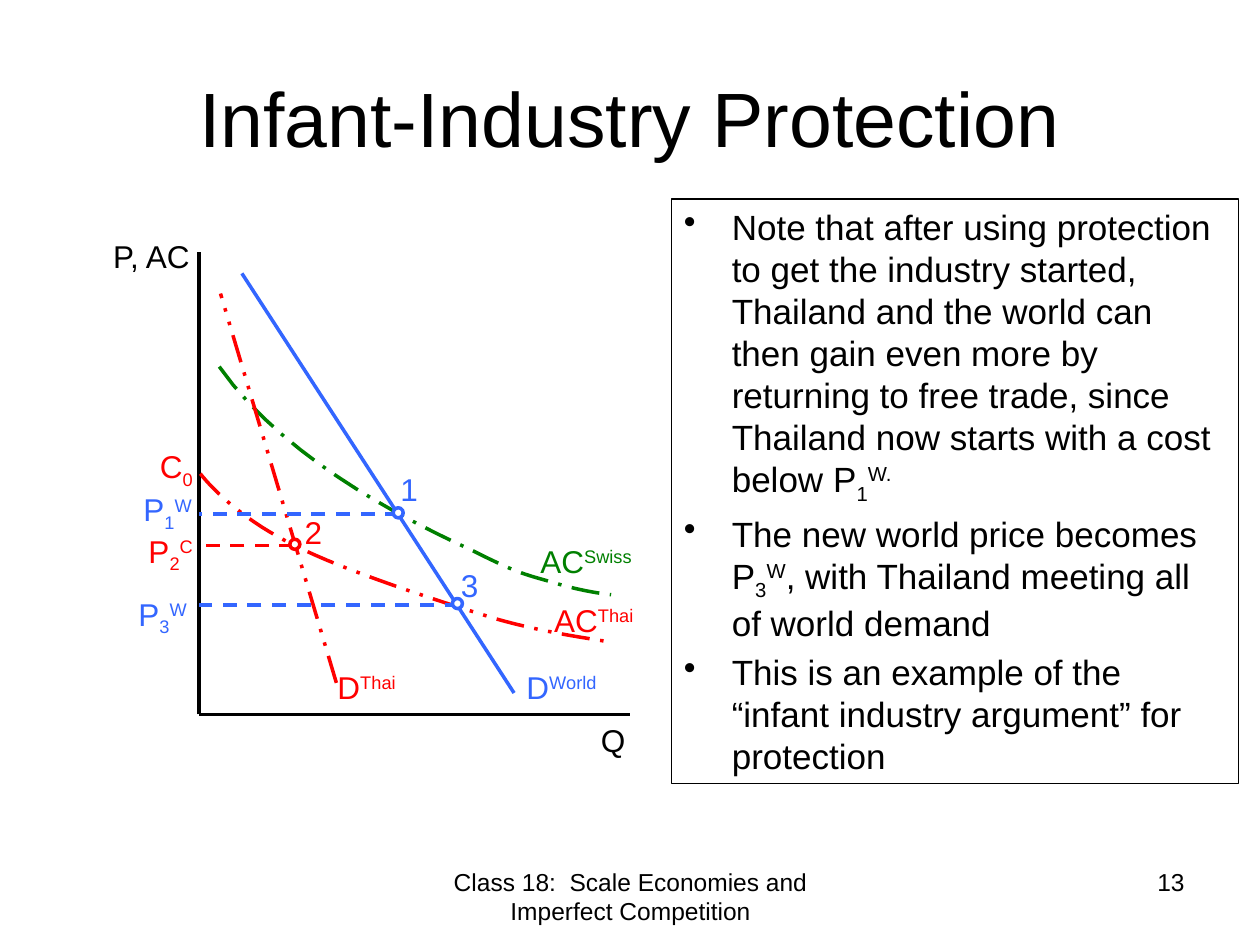
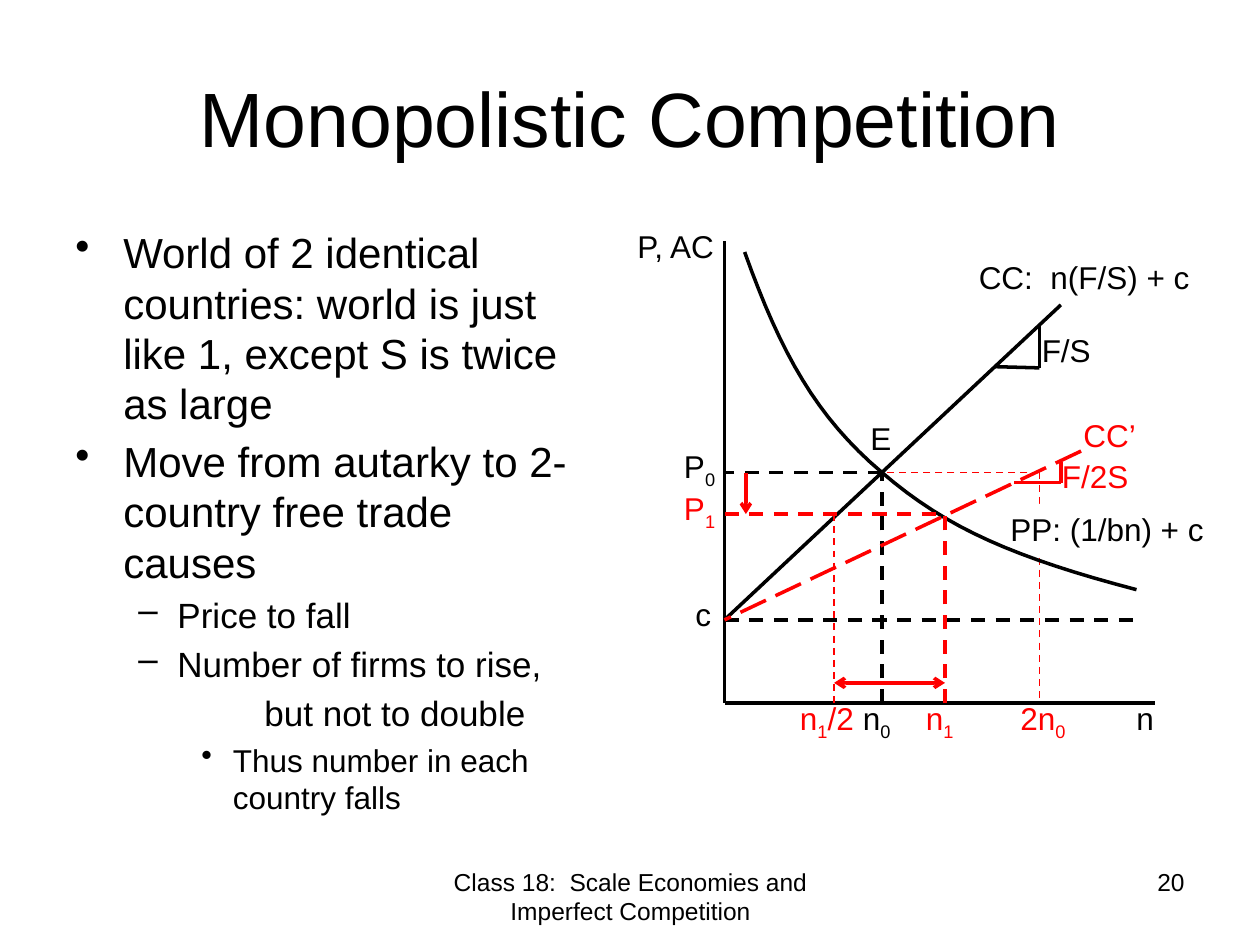
from pptx import Presentation
from pptx.dml.color import RGBColor
from pptx.enum import dml, shapes, text
from pptx.oxml import parse_xml
from pptx.oxml.ns import nsdecls, qn
from pptx.util import Inches, Pt

FONT = "Arial"
COLORS = {"black": "000000", "white": "FFFFFF", "red": "FF0000",
          "blue": "3366FF", "green": "008000"}
DASHES = {"dash": dml.MSO_LINE.DASH, "long": dml.MSO_LINE.LONG_DASH,
          "dash_dot": dml.MSO_LINE.LONG_DASH_DOT,
          "dash_dot_dot": dml.MSO_LINE.DASH_DOT_DOT}
FOOTER = "Class 18:  Scale Economies and Imperfect Competition"
AXIS_WIDTH, AXIS_HEIGHT = 3.42, 3.67
LABEL_HEIGHT, DOT = 0.4, 0.08

# Outline levels: left margin, first-line indent, bullet, text size
LEVELS = {"point20": (0.38, -0.38, "•", 20),
          "point24": (0.38, -0.38, "•", 24),
          "dash": (0.81, -0.31, "–", 20),
          "continued": (1.5, 0, None, 20),
          "detail": (1.25, -0.25, "•", 18)}

# In all text, "|_" starts a subscript, "|^" a superscript, "|" normal text.
# Lines: x1, y1, x2, y2, colour, dash, width, arrow
# Curves: colour, dash, start point, then three points per Bezier segment
# Labels: text, left, top, width, colour
INFANT = {
    "title": "Infant-Industry Protection", "number": "13",
    "body": {"box": (5.33, 1.58, 4.5, 4.64), "outline": "black", "items": [
        ("point20", "Note that after using protection to get the industry started, "
                    "Thailand and the world can then gain even more by returning to "
                    "free trade, since Thailand now starts with a cost below P|_1|^W."),
        ("point20", "The new world price becomes P|_3|^W|, with Thailand meeting "
                    "all of world demand"),
        ("point20", "This is an example of the “infant industry argument” "
                    "for protection")]},
    "origin": (1.58, 5.67),
    "curves": [
        ("green", "dash_dot", [(1.74, 2.91), (2.3, 3.71), (3.41, 4.21), (3.75, 4.37),
                               (4.09, 4.54), (4.13, 4.55), (4.38, 4.62),
                               (4.63, 4.7), (4.85, 4.72), (4.85, 4.72)]),
        ("red", "dash_dot_dot", [(1.59, 3.76), (1.7, 3.9), (1.95, 4.14), (2.34, 4.33),
                                 (2.73, 4.53), (3.51, 4.78), (3.93, 4.91),
                                 (4.35, 5.03), (4.71, 5.07), (4.86, 5.1)])],
    "lines": [
        (2.67, 5.42, 1.75, 2.33, "red", "dash_dot_dot"),
        (2.33, 4.33, 1.58, 4.33, "red", "dash"),
        (4.08, 5.5, 1.92, 2.17, "blue"),
        (3.17, 4.08, 1.58, 4.08, "blue", "dash"),
        (3.64, 4.8, 1.58, 4.8, "blue", "dash")],
    "dots": [(2.34, 4.32, "red"), (3.16, 4.07, "blue"), (3.63, 4.79, "blue")],
    "labels": [
        ("P, AC", 0.8, 1.83, 1.12, "black"),
        ("Q", 4.67, 5.67, 0.58, "black"),
        ("AC|^Swiss", 4.19, 4.25, 1.02, "green"),
        ("AC|^Thai", 4.3, 4.72, 0.87, "red"),
        ("D|^Thai", 2.58, 5.25, 0.78, "red"),
        ("D|^World", 4.08, 5.25, 1.58, "blue"),
        ("C|_0", 1.17, 3.5, 0.58, "red"),
        ("P|_1|^W", 1.04, 3.84, 0.67, "blue"),
        ("P|_2|^C", 1.08, 4.17, 0.58, "red"),
        ("P|_3|^W", 1, 4.67, 0.67, "blue"),
        ("1", 3.08, 3.68, 0.38, "blue"),
        ("2", 2.32, 4.02, 0.38, "red"),
        ("3", 3.56, 4.44, 0.38, "blue")],
}

MONOPOLISTIC = {
    "title": "Monopolistic Competition", "number": "20",
    "body": {"box": (0.5, 1.75, 4.15, 4.95), "outline": None, "items": [
        ("point24", "World of 2 identical countries: world is just like 1, "
                    "except S is twice as large"),
        ("point24", "Move from autarky to 2-country free trade causes"),
        ("dash", "Price to fall"),
        ("dash", "Number of firms to rise,"),
        ("continued", "but not to double"),
        ("detail", "Thus number in each country falls")]},
    "back_lines": [(8.25, 3.75, 8.25, 5.58, "red", "dash", 1)],
    "back_labels": [("PP: (1/bn) + c", 7.92, 4, 1.92, "black")],
    "origin": (5.75, 5.58),
    "curves": [("black", None, [(5.91, 2), (6.2, 2.81), (6.48, 3.31), (7, 3.75),
                                (7.52, 4.2), (8.07, 4.43), (9.02, 4.68)])],
    "lines": [
        (8.42, 2.42, 5.75, 4.92, "black"),
        (5.75, 4.92, 9, 4.92, "black", "dash"),
        (7.89, 2.91, 8.25, 2.92, "black"),
        (8.25, 2.58, 8.25, 2.92, "black"),
        (7, 5.58, 7, 3.75, "black", "dash"),
        (8.58, 3.58, 5.75, 4.92, "red", "long"),
        (8.05, 3.83, 8.42, 3.83, "red"),
        (8.42, 3.67, 8.42, 3.83, "red"),
        (7.5, 5.58, 7.5, 4.08, "red", "dash"),
        (8.25, 3.75, 7, 3.75, "red", "dash", 1),
        (7, 3.75, 5.75, 3.75, "black", "dash"),
        (5.75, 4.08, 7.5, 4.08, "red", "dash"),
        (6.62, 4.08, 6.62, 5.58, "red", "dash", 1),
        (5.92, 3.75, 5.92, 4.08, "red", None, 2, True),
        (7, 5.42, 6.62, 5.42, "red", None, 2, True),
        (7, 5.42, 7.5, 5.42, "red", None, 2, True)],
    "dots": [],
    "labels": [
        ("P, AC", 4.96, 1.75, 1.12, "black"),
        ("n", 8.92, 5.5, 0.42, "black"),
        ("CC:  n(F/S) + c", 7.67, 2, 2.33, "black"),
        ("CC’", 8.5, 3.25, 0.67, "red"),
        ("F/S", 8.17, 2.58, 0.67, "black"),
        ("F/2S", 8.33, 3.58, 0.83, "red"),
        ("E", 6.81, 3.28, 0.58, "black"),
        ("P|_0", 5.33, 3.5, 0.58, "black"),
        ("P|_1", 5.33, 3.83, 0.58, "red"),
        ("c", 5.42, 4.67, 0.58, "black"),
        ("n|_1|/2", 6.25, 5.5, 0.75, "red"),
        ("n|_0", 6.75, 5.5, 0.58, "black"),
        ("n|_1", 7.25, 5.5, 0.58, "red"),
        ("2n|_0", 8, 5.5, 0.58, "red")],
}


def rgb(name):
    return RGBColor.from_string(COLORS[name])


def write(p, marked, size=18, color="black", align=None):
    """Fill a paragraph, turning |_ and |^ marks into sub- and superscripts."""
    p.alignment = align
    for part in marked.split("|"):
        shift = {"_": "-25000", "^": "30000"}.get(part[0])
        r = p.add_run()
        r.text = part[1:] if shift else part
        r.font.name, r.font.size = FONT, Pt(size)
        r.font.color.rgb = rgb(color)
        if shift:
            r._r.get_or_add_rPr().set("baseline", shift)


def add_box(s, box, marked=None, fill=None, anchor=text.MSO_ANCHOR.TOP, **fmt):
    sp = s.shapes.add_textbox(*map(Inches, box))
    tf = sp.text_frame
    tf.word_wrap, tf.vertical_anchor = True, anchor
    if fill:
        sp.fill.solid()
        sp.fill.fore_color.rgb = rgb(fill)
    if marked:
        write(tf.paragraphs[0], marked, **fmt)
    return sp


def add_label(s, marked, x, y, width, color, fill=None):
    add_box(s, (x, y, width, LABEL_HEIGHT), marked, fill, color=color)


def style_line(line, color, dash=None, width=2):
    line.color.rgb, line.width = rgb(color), Pt(width)
    if dash:
        line.dash_style = DASHES[dash]


def add_line(s, x1, y1, x2, y2, color, dash=None, width=2, arrow=False):
    c = s.shapes.add_connector(shapes.MSO_CONNECTOR.STRAIGHT,
                               *map(Inches, (x1, y1, x2, y2)))
    style_line(c.line, color, dash, width)
    if arrow:
        c.line._get_or_add_ln().append(
            parse_xml(f'<a:tailEnd {nsdecls("a")} type="arrow"/>'))
    c._element.spPr.append(parse_xml(f'<a:effectLst {nsdecls("a")}/>'))


def bezier(p0, p1, p2, p3, steps=16):
    """Points along a cubic Bezier segment, without its start."""
    for t in (i / steps for i in range(1, steps + 1)):
        u = 1 - t
        yield tuple(Inches(u**3 * a + 3 * u * u * t * b + 3 * u * t * t * c + t**3 * d)
                    for a, b, c, d in zip(p0, p1, p2, p3))


def add_curve(s, color, dash, points):
    builder = s.shapes.build_freeform(*map(Inches, points[0]))
    for i in range(0, len(points) - 1, 3):
        builder.add_line_segments(list(bezier(*points[i:i + 4])), close=False)
    sp = builder.convert_to_shape()
    sp.shadow.inherit = False
    sp.fill.background()
    style_line(sp.line, color, dash)


def add_dot(s, x, y, color):
    sp = s.shapes.add_shape(shapes.MSO_SHAPE.OVAL, Inches(x - DOT / 2),
                            Inches(y - DOT / 2), Inches(DOT), Inches(DOT))
    sp.shadow.inherit = False
    sp.fill.solid()
    sp.fill.fore_color.rgb = rgb("white")
    style_line(sp.line, color)


def add_outline(s, box, outline, items):
    sp = add_box(s, box)
    if outline:
        style_line(sp.line, outline, width=0.75)
    tf = sp.text_frame
    for i, (level, marked) in enumerate(items):
        margin, indent, bullet, size = LEVELS[level]
        p = tf.add_paragraph() if i else tf.paragraphs[0]
        write(p, marked, size)
        p.space_before = Pt(4 if i else 0)
        pPr = p._p.get_or_add_pPr()
        pPr.set("marL", str(Inches(margin)))
        pPr.set("indent", str(Inches(indent)))
        if bullet:
            pPr.append(pPr.makeelement(qn("a:buChar"), {"char": bullet}))


def add_axes(s, x, y):
    add_line(s, x, y, x + AXIS_WIDTH, y, "black")
    add_line(s, x, y, x, y - AXIS_HEIGHT, "black")


def add_slide(prs, content):
    s = prs.slides.add_slide(prs.slide_layouts[6])
    for line in content.get("back_lines", []):
        add_line(s, *line)
    for label in content.get("back_labels", []):
        add_label(s, *label, fill="white")
    add_box(s, (0.5, 0.3, 9, 1.25), content["title"], size=44,
            anchor=text.MSO_ANCHOR.MIDDLE, align=text.PP_ALIGN.CENTER)
    add_outline(s, **content["body"])
    add_axes(s, *content["origin"])
    for add, key in ((add_curve, "curves"), (add_line, "lines"),
                     (add_dot, "dots"), (add_label, "labels")):
        for item in content[key]:
            add(s, *item)
    add_box(s, (3.42, 6.83, 3.17, 0.52), FOOTER, size=14, align=text.PP_ALIGN.CENTER)
    add_box(s, (7.17, 6.83, 2.33, 0.52), content["number"], size=14,
            align=text.PP_ALIGN.RIGHT)


def main():
    prs = Presentation()
    prs.slide_width, prs.slide_height = Inches(10), Inches(7.5)
    for content in (INFANT, MONOPOLISTIC):
        add_slide(prs, content)
    prs.save("out.pptx")


if __name__ == "__main__":
    main()
